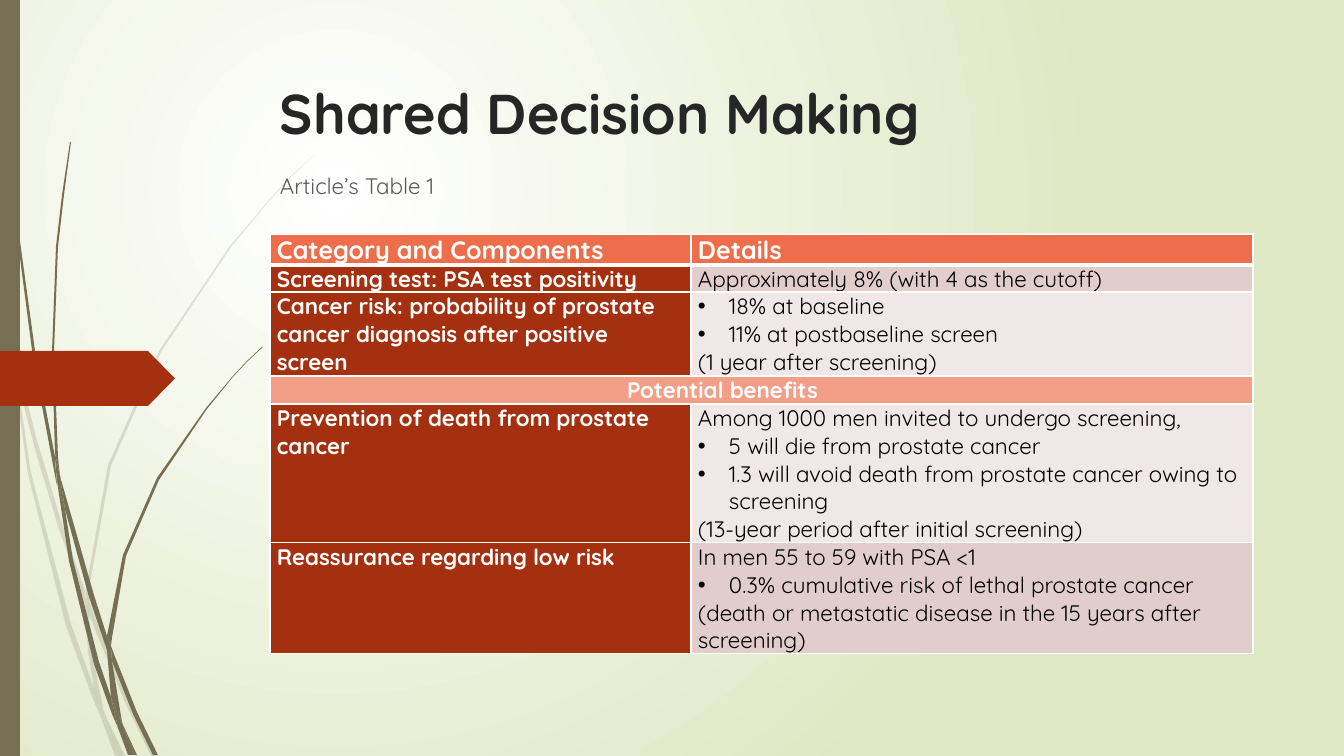
from lxml import etree
from pptx import Presentation
from pptx.dml.color import RGBColor
from pptx.enum.shapes import MSO_SHAPE as Shape
from pptx.enum.text import MSO_ANCHOR as Anchor, PP_ALIGN as Align
from pptx.oxml.ns import qn
from pptx.util import Emu, Pt

FONT = "Quicksand"
WHITE = RGBColor(0xFF, 0xFF, 0xFF)
BLACK = RGBColor(0x00, 0x00, 0x00)
INK = RGBColor(0x26, 0x26, 0x26)
GREY = RGBColor(0x59, 0x59, 0x59)
PALE_GREEN = RGBColor(0xDF, 0xE8, 0xC4)
OLIVE = RGBColor(0x76, 0x6F, 0x54)
RUST = RGBColor(0xA5, 0x30, 0x10)
ORANGE = RGBColor(0xEE, 0x6E, 0x4B)
SALMON = RGBColor(0xF3, 0x9E, 0x87)
ROSE = RGBColor(0xE1, 0xCD, 0xCC)
BLUSH = RGBColor(0xF0, 0xE8, 0xE7)

WIDTH, HEIGHT = 1344, 756
SCALE = 12192000 / WIDTH

PALE_BLADES = [
    [(11, 353), (9, 325), (0, 284), (0, 301), (10, 347)],
    [(58, 526), (85, 604), (85, 591), (62, 524), (36, 437), (14, 348),
     (17, 379), (36, 453)],
    [(93, 612), (89, 601), (89, 615), (124, 700), (151, 756), (156, 756),
     (128, 698)],
    [(120, 756), (125, 756), (106, 717)],
    [(94, 688), (71, 624), (31, 473), (17, 379), (11, 353), (28, 474),
     (66, 626), (93, 699), (102, 720), (100, 713)],
    [(85, 604), (88, 651), (94, 688), (97, 698), (106, 717), (104, 712),
     (92, 651), (89, 615), (89, 613)],
    [(89, 589), (111, 466), (161, 352), (231, 247), (270, 200), (292, 176),
     (314, 155), (291, 176), (270, 199), (230, 246), (159, 351), (108, 465),
     (86, 589), (86, 591), (89, 601)],
    [(102, 720), (115, 756), (120, 756)],
    [(89, 613), (89, 615), (89, 601), (86, 591), (85, 604)],
    [(97, 698), (94, 688), (100, 713), (102, 720), (120, 756), (106, 717)],
]
DARK_BLADES = [
    [(7, 111), (17, 235), (33, 358), (56, 481), (57, 485), (55, 461),
     (55, 457), (36, 358), (19, 234), (8, 110), (5, 48), (4, 0), (3, 0),
     (4, 48)],
    [(89, 597), (107, 650), (107, 638), (107, 636), (94, 595), (60, 476),
     (65, 509)],
    [(114, 654), (111, 646), (112, 661), (133, 714), (153, 755), (158, 755),
     (137, 712)],
    [(111, 697), (99, 662), (73, 560), (65, 509), (57, 481), (69, 561),
     (94, 664), (112, 714), (118, 728), (117, 723)],
    [(60, 476), (58, 457), (54, 352), (58, 247), (64, 195), (71, 142),
     (70, 142), (62, 195), (56, 247), (52, 352), (55, 453)],
    [(134, 755), (137, 755), (123, 725)],
    [(57, 481), (65, 509), (60, 476), (55, 453), (55, 457)],
    [(112, 638), (126, 556), (159, 480), (207, 409), (233, 377), (247, 362),
     (263, 347), (262, 347), (247, 361), (233, 376), (206, 408), (157, 478),
     (123, 555), (107, 636), (111, 646)],
    [(118, 728), (128, 755), (132, 755)],
    [(107, 650), (111, 697), (117, 712), (123, 725), (122, 722), (112, 661),
     (110, 656)],
    [(107, 650), (110, 656), (112, 661), (111, 646), (107, 636), (107, 638)],
    [(117, 712), (111, 697), (117, 723), (118, 728), (131, 755), (134, 755),
     (123, 725)],
]

COLUMNS = [421, 562]
ROW_HEIGHTS = [31, 27, 84, 28, 139, 111]
HEADER = ["Category and Components", "Details"]
SECTION = "Potential benefits"
SECTION_ROW = 3
BODY = {
    1: ("Screening test: PSA test positivity",
        ["Approximately 8% (with 4 as the cutoff)"], ROSE),
    2: ("Cancer risk: probability of prostate cancer diagnosis after positive screen",
        ["•18% at baseline", "•11% at postbaseline screen",
         "(1 year after screening)"], BLUSH),
    4: ("Prevention of death from prostate cancer",
        ["Among 1000 men invited to undergo screening,",
         "•5 will die from prostate cancer",
         "•1.3 will avoid death from prostate cancer owing to screening",
         "(13-year period after initial screening)"], BLUSH),
    5: ("Reassurance regarding low risk",
        ["In men 55 to 59 with PSA <1",
         "•0.3% cumulative risk of lethal prostate cancer",
         "(death or metastatic disease in the 15 years after screening)"], ROSE),
}


def px(n):
    return Emu(round(n * SCALE))


def paint_background(s):
    fill = s.background.fill
    fill.gradient()
    for stop, color in zip(fill.gradient_stops, (WHITE, PALE_GREEN)):
        stop.color.rgb = color
    grad = s.element.find(".//" + qn("a:gradFill"))
    grad.remove(grad.find(qn("a:lin")))
    circle = etree.SubElement(grad, qn("a:path"), path="circle")
    etree.SubElement(circle, qn("a:fillToRect"),
                     l="50000", t="50000", r="100000", b="100000")


def paint(sp, color, alpha=100):
    sp.shadow.inherit = False
    sp.line.fill.background()
    sp.fill.solid()
    sp.fill.fore_color.rgb = color
    if alpha < 100:
        clr = sp.fill._xPr.find(".//" + qn("a:srgbClr"))
        etree.SubElement(clr, qn("a:alpha"), val=str(alpha * 1000))


def add_grass(s, blades, alpha):
    group = s.shapes.add_group_shape()
    for points in blades:
        builder = group.shapes.build_freeform(*points[0], scale=SCALE)
        builder.add_line_segments(points[1:], close=True)
        paint(builder.convert_to_shape(), OLIVE, alpha)


def add_block(s, kind, x, y, w, h, color):
    sp = s.shapes.add_shape(kind, px(x), px(y), px(w), px(h))
    paint(sp, color)
    return sp


def format_runs(p, size, color, bold):
    for r in p.runs:
        r.font.name = FONT
        r.font.size = Pt(size)
        r.font.bold = bold
        r.font.color.rgb = color


def add_text(s, text, y, h, size, color, bold, anchor):
    tf = s.shapes.add_textbox(px(270), px(y), px(983), px(h)).text_frame
    tf.word_wrap = True
    tf.vertical_anchor = anchor
    tf.text = text
    format_runs(tf.paragraphs[0], size, color, bold)


def add_bullet(p):
    pPr = p._p.get_or_add_pPr()
    pPr.set("marL", str(px(31)))
    pPr.set("indent", str(-px(31)))
    etree.SubElement(pPr, qn("a:buFont"), typeface="Arial")
    etree.SubElement(pPr, qn("a:buChar"), char="•")


def add_borders(cell, bottom):
    tcPr = cell._tc.get_or_add_tcPr()
    for i, side in enumerate("LRTB"):
        width = Pt(bottom if side == "B" else 1)
        ln = etree.Element(qn(f"a:ln{side}"), w=str(width))
        solid = etree.SubElement(ln, qn("a:solidFill"))
        etree.SubElement(solid, qn("a:srgbClr"), val=str(WHITE))
        tcPr.insert(i, ln)


def fill_cell(cell, lines, fill, color=WHITE, bold=True, size=16, bottom=1):
    cell.margin_left = cell.margin_right = px(7)
    cell.margin_top = cell.margin_bottom = 0
    cell.fill.solid()
    cell.fill.fore_color.rgb = fill
    add_borders(cell, bottom)
    tf = cell.text_frame
    for i, line in enumerate(lines):
        p = tf.add_paragraph() if i else tf.paragraphs[0]
        p.text = line.removeprefix("•")
        if line.startswith("•"):
            add_bullet(p)
        format_runs(p, size, color, bold)


def add_decision_table(s):
    table = s.shapes.add_table(len(ROW_HEIGHTS), len(COLUMNS), px(270), px(234),
                               px(sum(COLUMNS)), px(sum(ROW_HEIGHTS))).table
    table.horz_banding = False
    for column, width in zip(table.columns, COLUMNS):
        column.width = px(width)
    for row, height in zip(table.rows, ROW_HEIGHTS):
        row.height = px(height)
    for col, heading in enumerate(HEADER):
        fill_cell(table.cell(0, col), [heading], ORANGE, size=18, bottom=3)
    for row, (category, details, shade) in BODY.items():
        fill_cell(table.cell(row, 0), [category], RUST)
        fill_cell(table.cell(row, 1), details, shade, BLACK, False)
    section = table.cell(SECTION_ROW, 0)
    section.merge(table.cell(SECTION_ROW, 1))
    fill_cell(section, [SECTION], SALMON)
    section.margin_right = px(85)
    section.text_frame.paragraphs[0].alignment = Align.CENTER


def main():
    prs = Presentation()
    prs.slide_width, prs.slide_height = px(WIDTH), px(HEIGHT)
    s = prs.slides.add_slide(prs.slide_layouts[6])
    paint_background(s)
    add_grass(s, PALE_BLADES, 20)
    add_grass(s, DARK_BLADES, 100)
    add_block(s, Shape.RECTANGLE, 0, 0, 20, HEIGHT, OLIVE)
    marker = add_block(s, Shape.PENTAGON, 0, 351, 175, 55, RUST)
    marker.adjustments[0] = 0.49
    add_text(s, "Shared Decision Making", 58, 93, 40, INK, True, Anchor.BOTTOM)
    add_text(s, "Article’s Table 1", 167, 568, 16, GREY, False, Anchor.TOP)
    add_decision_table(s)
    prs.save("out.pptx")


if __name__ == "__main__":
    main()
